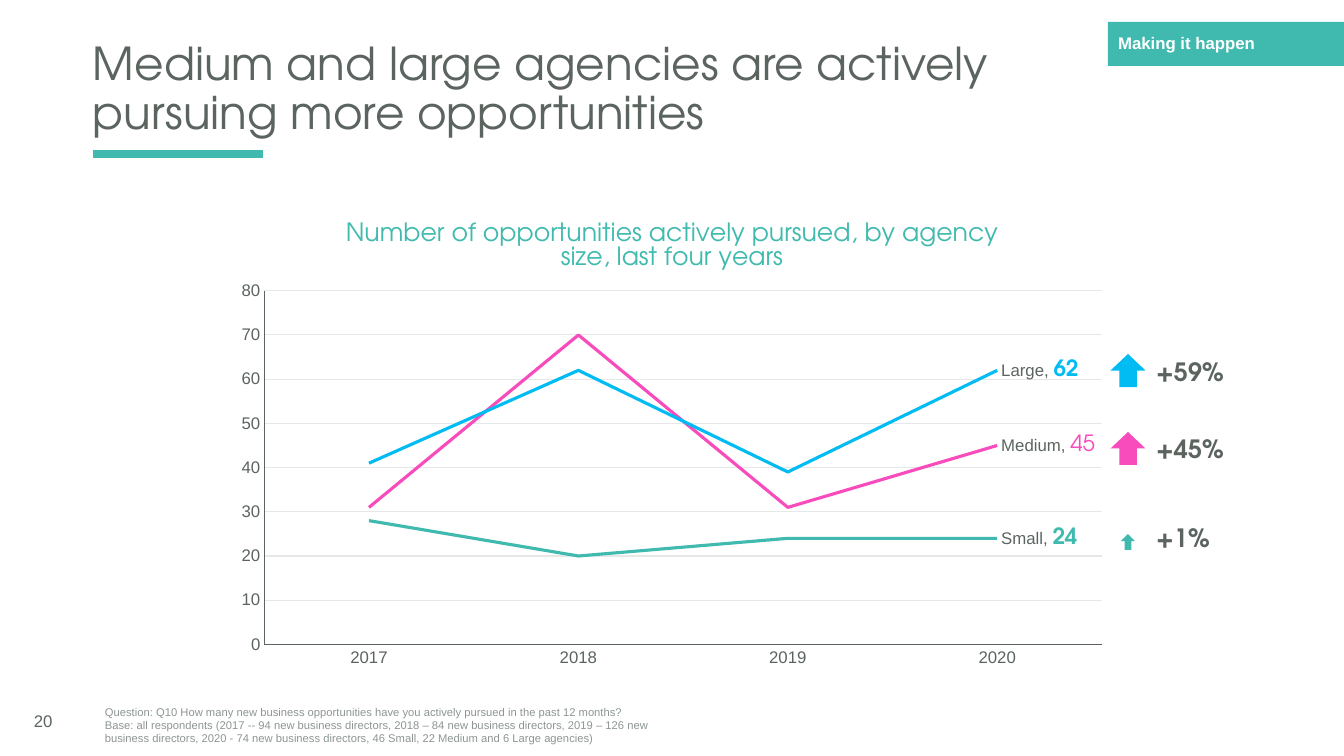
from dataclasses import dataclass

from lxml import etree
from pptx import Presentation
from pptx.chart.data import CategoryChartData as ChartData
from pptx.dml.color import RGBColor as Rgb
from pptx.enum.chart import XL_CHART_TYPE as ChartType
from pptx.enum.chart import XL_LABEL_POSITION as LabelPosition
from pptx.enum.chart import XL_MARKER_STYLE as Marker
from pptx.enum.chart import XL_TICK_MARK as Tick
from pptx.enum.shapes import MSO_CONNECTOR as Connector
from pptx.enum.shapes import MSO_SHAPE as Shape
from pptx.enum.text import MSO_ANCHOR as Anchor
from pptx.enum.text import MSO_AUTO_SIZE as AutoSize
from pptx.enum.text import PP_ALIGN as Align
from pptx.oxml import parse_xml
from pptx.oxml.ns import nsdecls, qn
from pptx.util import Emu, Pt


@dataclass(frozen=True)
class Theme:
    teal: str = "40BAAE"
    pink: str = "F84CBC"
    blue: str = "00BCF2"
    ink: str = "5B645F"
    muted: str = "8D9691"
    grid: str = "E6E8E7"
    white: str = "FFFFFF"
    display: str = "TeX Gyre Adventor"
    body: str = "Arial"
    title_size: float = 32.4
    heading_size: int = 18
    value_size: int = 16
    text_size: int = 12
    note_size: int = 8


THEME = Theme()
YEARS = ("2017", "2018", "2019", "2020")
# Agency size, values, colour, whether the last value is bold
AGENCIES = (
    ("Small", (28, 20, 24, 24), THEME.teal, True),
    ("Medium", (31, 70, 31, 45), THEME.pink, False),
    ("Large", (41, 62, 39, 62), THEME.blue, True),
)
# Change, text top, arrow top, arrow width, arrow height, colour
CHANGES = (
    ("+59%", 351, 354, 35, 33, THEME.blue),
    ("+45%", 428, 432, 35, 33, THEME.pink),
    ("+1%", 517, 534, 14, 16, THEME.teal),
)
NOTES = (
    "Question: Q10 How many new business opportunities have you actively "
    "pursued in the past 12 months?",
    "Base: all respondents (2017 -- 94 new business directors, 2018 – 84 new "
    "business directors, 2019 – 126 new business directors, 2020 - 74 new "
    "business directors, 46 Small, 22 Medium and 6 Large agencies)",
)


def px(length):
    return Emu(round(length * 914400 / 100.8))


def place(shape, left, top, width, height):
    shape.left, shape.top = px(left), px(top)
    shape.width, shape.height = px(width), px(height)


def style_font(font, size, color, name=THEME.body, bold=False):
    font.name, font.size, font.bold = name, Pt(size), bold
    font.color.rgb = Rgb.from_string(color)


def add_run(para, text, *style, **options):
    span = para.add_run()
    span.text = text
    style_font(span.font, *style, **options)


def color_line(line, color, width):
    line.color.rgb = Rgb.from_string(color)
    line.width = Pt(width)


def add_text(page, box, lines, *style, anchor=Anchor.TOP, **options):
    frame = page.shapes.add_textbox(*map(px, box)).text_frame
    frame.word_wrap = True
    frame.vertical_anchor = anchor
    for index, text in enumerate(lines):
        para = frame.add_paragraph() if index else frame.paragraphs[0]
        add_run(para, text, *style, **options)


def fill_title(page, text):
    title = page.shapes.title
    place(title, 93, 40, 993, 104)
    frame = title.text_frame
    frame.auto_size = AutoSize.NONE
    frame.vertical_anchor = Anchor.BOTTOM
    frame.margin_left = frame.margin_right = 0
    frame.margin_top = frame.margin_bottom = px(5)
    para = frame.paragraphs[0]
    para.alignment, para.line_spacing = Align.LEFT, 0.9
    add_run(para, text, THEME.title_size, THEME.ink, name=THEME.display)


def fill_section_tag(page, text):
    tag = page.placeholders[1]
    place(tag, 1108, 22, 236, 44)
    tag.fill.solid()
    tag.fill.fore_color.rgb = Rgb.from_string(THEME.teal)
    frame = tag.text_frame
    frame.auto_size = AutoSize.NONE
    frame.vertical_anchor = Anchor.MIDDLE
    para = frame.paragraphs[0]
    properties = para._p.get_or_add_pPr()
    properties.set("marL", "0")
    properties.set("indent", "0")
    etree.SubElement(properties, qn("a:buNone"))
    para.line_spacing, para.space_before = 0.9, Pt(0)
    add_run(para, text, THEME.text_size, THEME.white, bold=True)


def add_rule(page, left, right, y):
    rule = page.shapes.add_connector(Connector.STRAIGHT, *map(px, (left, y, right, y)))
    color_line(rule.line, THEME.teal, 6)
    etree.SubElement(rule._element.spPr, qn("a:effectLst"))


def add_arrow(page, box, color):
    arrow = page.shapes.add_shape(Shape.DOWN_ARROW, *map(px, box))
    arrow.rotation = 180
    arrow.shadow.inherit = False
    arrow.fill.solid()
    arrow.fill.fore_color.rgb = Rgb.from_string(color)
    arrow.line.fill.background()


def style_axis(axis):
    axis.major_tick_mark = axis.minor_tick_mark = Tick.NONE
    style_font(axis.tick_labels.font, THEME.text_size, THEME.ink)
    color_line(axis.format.line, THEME.ink, 0.75)


def set_plot_layout(chart, x, y, width, height):
    area = chart._chartSpace.chart.plotArea
    for old in area.findall(qn("c:layout")):
        area.remove(old)
    sizes = "".join(f'<c:{tag} val="{value}"/>' for tag, value in
                    (("x", x), ("y", y), ("w", width), ("h", height)))
    area.insert(0, parse_xml(
        f'<c:layout {nsdecls("c")}><c:manualLayout><c:layoutTarget val="inner"/>'
        f'<c:xMode val="edge"/><c:yMode val="edge"/>{sizes}'
        '</c:manualLayout></c:layout>'))


def style_series(series, agency, color, bold):
    series.smooth = False
    series.marker.style = Marker.NONE
    color_line(series.format.line, color, 2.25)
    last = len(YEARS) - 1
    label = series.points[last].data_label
    para = label.text_frame.paragraphs[0]
    add_run(para, f"{agency}, ", THEME.text_size, THEME.ink)
    add_run(para, str(int(series.values[last])), THEME.value_size, color,
            name=THEME.display, bold=bold)
    label.position = LabelPosition.RIGHT


def add_line_chart(page, heading):
    data = ChartData(number_format="#,##0")
    data.categories = YEARS
    for agency, values, _, _ in AGENCIES:
        data.add_series(agency, values)
    box = map(px, (224, 200, 896, 478))
    chart = page.shapes.add_chart(ChartType.LINE, *box, data).chart
    chart.has_legend = False
    style_font(chart.font, 10, THEME.ink)
    chart.plots[0].vary_by_categories = False
    # Heading
    para = chart.chart_title.text_frame.paragraphs[0]
    para.line_spacing = 0.8
    add_run(para, heading, THEME.heading_size, THEME.teal, name=THEME.display)
    chart.chart_title.include_in_layout = False
    # Axes
    style_axis(chart.category_axis)
    scale = chart.value_axis
    style_axis(scale)
    scale.minimum_scale, scale.maximum_scale, scale.major_unit = 0, 80, 10
    color_line(scale.major_gridlines.format.line, THEME.grid, 0.75)
    set_plot_layout(chart, 0.045, 0.19, 0.935, 0.74)
    # Lines with a label at the last year
    for series, (agency, _, color, bold) in zip(chart.plots[0].series, AGENCIES):
        style_series(series, agency, color, bold)


def main():
    deck = Presentation()
    deck.slide_width, deck.slide_height = px(1344), px(756)
    page = deck.slides.add_slide(deck.slide_layouts[1])
    # Header
    add_rule(page, 93, 263, 154)
    fill_title(page, "Medium and large agencies are actively pursuing more opportunities")
    fill_section_tag(page, "Making it happen")
    # Chart and changes
    add_line_chart(page, "Number of opportunities actively pursued, by agency size, last four years")
    for change, text_top, arrow_top, width, height, color in CHANGES:
        add_text(page, (1146, text_top, 137, 40), [change], THEME.heading_size,
                 THEME.ink, name=THEME.display, bold=True)
        add_arrow(page, (1128 - width / 2, arrow_top, width, height), color)
    # Footer
    add_text(page, (95, 700, 584, 50), NOTES, THEME.note_size, THEME.muted)
    add_text(page, (24, 701, 60, 40), ["20"], THEME.text_size, THEME.ink, anchor=Anchor.MIDDLE)
    deck.save("out.pptx")


if __name__ == "__main__":
    main()
